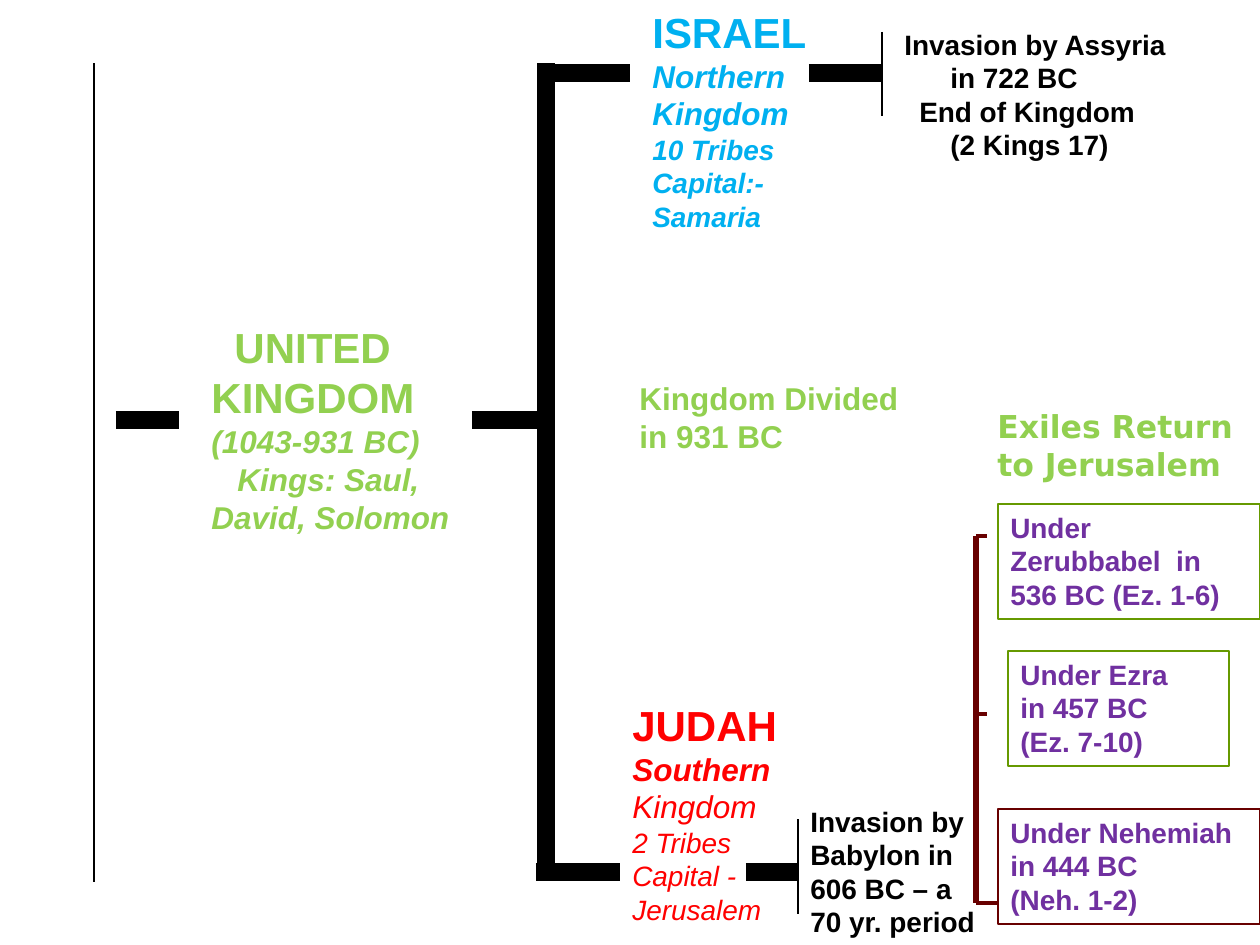
"""Build a timeline slide of the united and divided kingdoms."""
from pptx import Presentation
from pptx.dml.color import RGBColor
from pptx.enum.shapes import MSO_CONNECTOR, MSO_SHAPE
from pptx.enum.text import MSO_ANCHOR, PP_ALIGN
from pptx.oxml.ns import qn
from pptx.util import Emu, Pt
from lxml.etree import SubElement

SCALE = 914400 / 126
COLORS = {
    "black": "000000", "lime": "92D050", "red": "FF0000", "sky": "00B0F0",
    "purple": "7030A0", "olive": "669900", "maroon": "680000",
}

# color, width in points, ends in px
LINES = [
    ("black", 0.75, [(94, 63, 94, 882), (882, 32, 882, 116), (798, 819, 798, 914)]),
    ("black", 10, [
        (116, 420, 179, 420), (472, 420, 546, 420),
        (546, 441, 546, 63), (546, 420, 546, 872),
        (546, 73, 630, 73), (536, 872, 620, 872),
        (746, 872, 798, 872), (809, 73, 882, 73),
    ]),
    ("maroon", 3, [(976, 536, 976, 903)]),
    ("maroon", 2.25, [
        (976, 714, 987, 714), (976, 536, 987, 536), (976, 903, 998, 903),
    ]),
]

# place in px, color, font, then lines of: text, size, style, first indent in px
LABELS = [
    ((199, 315, 273, 227), "lime", "Arial", [
        ("UNITED", 24, "b", 23), ("KINGDOM", 24, "b", 0),
        ("(1043-931 BC)", 18, "bi", 0),
        ("Kings: Saul, David, Solomon", 18, "bi", 26),
    ]),
    ((620, 693, 179, 239), "red", "Arial", [
        ("JUDAH", 24, "b", 0), ("Southern", 18, "bi", 0),
        ("Kingdom", 18, "i", 0), ("2 Tribes", 16, "i", 0),
        ("Capital -", 16, "i", 0), ("Jerusalem", 16, "i", 0),
    ]),
    ((640, 0, 199, 239), "sky", "Arial", [
        ("ISRAEL", 24, "b", 0), ("Northern", 18, "bi", 0),
        ("Kingdom", 18, "bi", 0), ("10 Tribes", 16, "bi", 0),
        ("Capital:-", 16, "bi", 0), ("Samaria", 16, "bi", 0),
    ]),
    ((892, 21, 315, 149), "black", "Arial", [
        ("Invasion by Assyria", 16, "b", 0), ("in 722 BC", 16, "b", 46),
        ("End of Kingdom", 16, "b", 15), ("(2 Kings 17)", 16, "b", 46),
    ]),
    ((798, 798, 199, 147), "black", "Arial", [
        ("Invasion by", 16, "b", 0), ("Babylon in", 16, "b", 0),
        ("606 BC – a 70 yr. period", 16, "b", 0),
    ]),
    ((985, 401, 275, 88), "lime", "DejaVu Sans", [
        ("Exiles Return", 18, "b", 0), ("to Jerusalem", 18, "b", 0),
    ]),
    ((627, 373, 285, 88), "lime", "Arial", [
        ("Kingdom Divided", 18, "b", 0), ("in 931 BC", 18, "b", 0),
    ]),
]

# place in px, border color, lines
RETURNS = [
    ((998, 504, 262, 115), "olive", ["Under Zerubbabel  in", "536 BC (Ez. 1-6)"]),
    ((1008, 651, 221, 115), "olive", ["Under Ezra", "in 457 BC", "(Ez. 7-10)"]),
    ((998, 809, 262, 115), "maroon", ["Under Nehemiah", "in 444 BC", "(Neh. 1-2)"]),
]


def px(*sizes):
    return [Emu(round(size * SCALE)) for size in sizes]


def rgb(name):
    return RGBColor.from_string(COLORS[name])


def draw(slide, ends, color, width):
    line = slide.shapes.add_connector(MSO_CONNECTOR.STRAIGHT, *px(*ends))
    line.line.color.rgb = rgb(color)
    line.line.width = Pt(width)
    SubElement(line._element.spPr, qn("a:effectLst"))


def write(shape, color, font, lines):
    frame = shape.text_frame
    frame.word_wrap = True
    frame.vertical_anchor = MSO_ANCHOR.TOP
    for i, (text, size, style, indent) in enumerate(lines):
        para = frame.add_paragraph() if i else frame.paragraphs[0]
        para.text = text
        para.alignment = PP_ALIGN.LEFT
        para.font.name = font
        para.font.size = Pt(size)
        para.font.bold = "b" in style
        para.font.italic = "i" in style
        para.font.color.rgb = rgb(color)
        if indent:
            para._p.get_or_add_pPr().set("indent", str(px(indent)[0]))


def main():
    deck = Presentation()
    deck.slide_width, deck.slide_height = px(1260, 945)
    slide = deck.slides.add_slide(deck.slide_layouts[6])

    for color, width, group in LINES:
        for ends in group:
            draw(slide, ends, color, width)

    for place, color, font, lines in LABELS:
        write(slide.shapes.add_textbox(*px(*place)), color, font, lines)

    for place, color, lines in RETURNS:
        box = slide.shapes.add_shape(MSO_SHAPE.RECTANGLE, *px(*place))
        box.shadow.inherit = False
        box.fill.background()
        box.line.color.rgb = rgb(color)
        box.line.width = Pt(0.75)
        write(box, "purple", "Arial", [(text, 16, "b", 0) for text in lines])

    deck.save("out.pptx")


if __name__ == "__main__":
    main()
